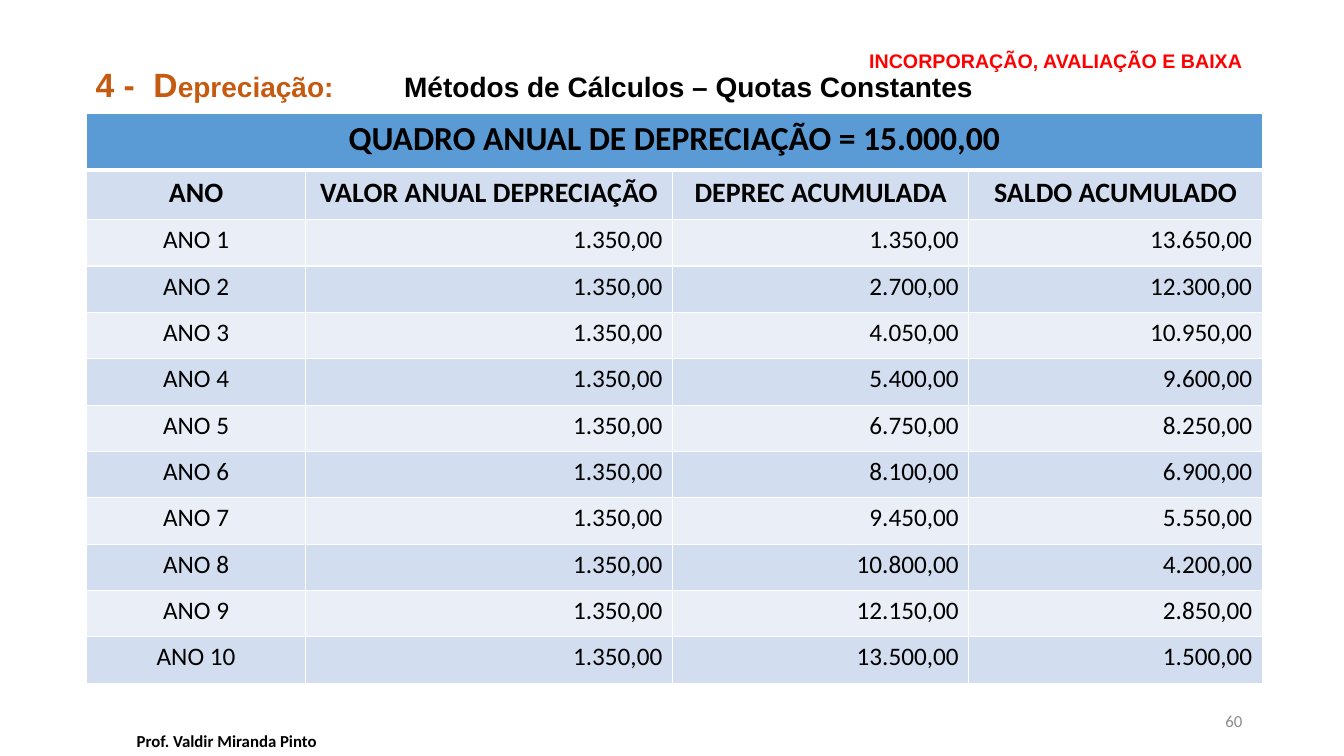
"""Build the annual straight-line depreciation slide."""
from lxml.etree import SubElement
from pptx import Presentation
from pptx.dml.color import RGBColor as RGB
from pptx.enum.text import MSO_ANCHOR as Anchor, PP_ALIGN as Align
from pptx.oxml.ns import qn
from pptx.util import Inches, Pt

THEME = {
    "red": "FF0000", "orange": "C55A11", "black": "000000", "grey": "8C8C8C",
    "white": "FFFFFF", "banner": "5B9BD5", "dark_band": "D2DEEF", "light_band": "EAEFF7",
    "small": 12, "label": 14, "value": 18, "heading": 20, "large": 24,
}


def write(paragraph, pieces, align, **layout):
    """Add styled runs given as (text, font, size, colour, bold)."""
    for name, value in {"alignment": align, **layout}.items():
        setattr(paragraph, name, value)
    for text, face, size, colour, bold in pieces:
        run = paragraph.add_run()
        run.text = text
        for name, value in {"name": face, "size": Pt(THEME[size]), "bold": bold}.items():
            setattr(run.font, name, value)
        run.font.color.rgb = RGB.from_string(THEME[colour])


def draw_borders(cell, top, bottom):
    """Give a cell white edges, with the top and bottom widths in points."""
    properties = cell._tc.get_or_add_tcPr()
    for edge, width in {"lnL": 1, "lnR": 1, "lnT": top, "lnB": bottom}.items():
        line = SubElement(properties, qn(f"a:{edge}"), w=str(Pt(width)))
        SubElement(SubElement(line, qn("a:solidFill")), qn("a:srgbClr"), val=THEME["white"])


deck = Presentation()
deck.slide_width, deck.slide_height = Inches(13.33), Inches(7.5)
slide = deck.slides.add_slide(deck.slide_layouts[6])

texts = [
    ((1.07, 0.43, 11.35, 0.38), Anchor.MIDDLE, Align.RIGHT, 0.9,
     [("INCORPORAÇÃO, AVALIAÇÃO E BAIXA", "Arial", "label", "red", True)]),
    ((0.85, 0.63, 11.66, 0.77), Anchor.TOP, Align.LEFT, 0.9,
     [("4 -  D", "Arial", "large", "orange", True),
      ("epreciação:\t", "Arial", "heading", "orange", True),
      ("Métodos de Cálculos – Quotas Constantes", "Arial", "heading", "black", True)]),
    ((0, 7.22, 4.5, 0.26), Anchor.MIDDLE, Align.CENTER, 1.0,
     [("Prof. Valdir Miranda Pinto", "Calibri", "small", "black", True)]),
    ((9.42, 6.95, 3, 0.4), Anchor.MIDDLE, Align.RIGHT, 1.0,
     [("60", "Calibri", "small", "grey", False)]),
]
for place, anchor, align, spacing, pieces in texts:
    frame = slide.shapes.add_textbox(*map(Inches, place)).text_frame
    for name, value in {"word_wrap": True, "vertical_anchor": anchor}.items():
        setattr(frame, name, value)
    paragraph = frame.paragraphs[0]
    if any("\t" in piece[0] for piece in pieces):
        stops = SubElement(paragraph._p.get_or_add_pPr(), qn("a:tabLst"))
        SubElement(stops, qn("a:tab"), pos=str(Inches(3.06)), algn="l")
    write(paragraph, pieces, align, line_spacing=spacing)

asset_value, yearly_quota, years = 15000, 1350, 10
rows = [
    ["QUADRO ANUAL DE DEPRECIAÇÃO = 15.000,00", "", "", ""],
    ["ANO", "VALOR ANUAL DEPRECIAÇÃO", "DEPREC ACUMULADA", "SALDO ACUMULADO"],
]
for year in range(1, years + 1):
    accumulated = yearly_quota * year
    amounts = [yearly_quota, accumulated, asset_value - accumulated]
    rows.append([f"ANO {year}"] + [f"{amount:,}".replace(",", ".") + ",00" for amount in amounts])

column_widths = [2.17, 3.64, 2.94, 2.91]
row_heights = [0.56, 0.49] + [0.46] * years
schedule = slide.shapes.add_table(
    len(rows), len(column_widths), Inches(0.86), Inches(1.13),
    Inches(sum(column_widths)), Inches(sum(row_heights))).table
for name, value in {"first_row": False, "horz_banding": False}.items():
    setattr(schedule, name, value)
for column, width in zip(schedule.columns, column_widths):
    column.width = Inches(width)
for row, height in zip(schedule.rows, row_heights):
    row.height = Inches(height)
schedule.cell(0, 0).merge(schedule.cell(0, len(column_widths) - 1))

for r, row in enumerate(rows):
    band = "banner" if r == 0 else "dark_band" if r % 2 else "light_band"
    size = {0: "large", 1: "heading"}.get(r, "value")
    for c, text in enumerate(row):
        cell = schedule.cell(r, c)
        draw_borders(cell, top=3 if r == 1 else 1, bottom=3 if r == 0 else 1)
        cell.fill.solid()
        cell.fill.fore_color.rgb = RGB.from_string(THEME[band])
        if text:
            align = Align.RIGHT if r > 1 and c else Align.CENTER
            write(cell.text_frame.paragraphs[0], [(text, "Calibri", size, "black", r < 2)], align)

deck.save("out.pptx")
